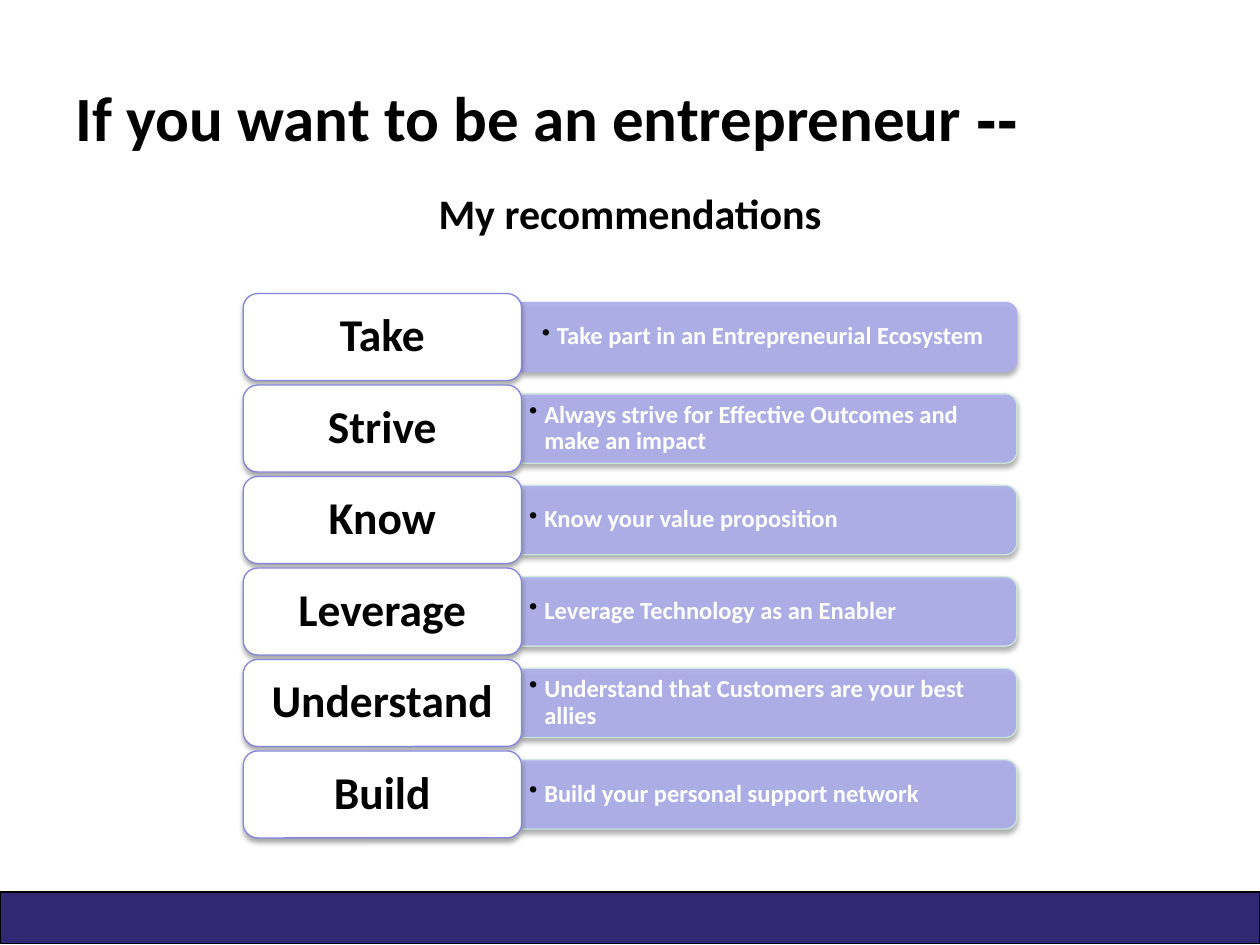
from pptx import Presentation
from pptx.dml.color import RGBColor
from pptx.enum.shapes import MSO_SHAPE
from pptx.enum.text import MSO_ANCHOR, PP_ALIGN
from pptx.oxml import parse_xml
from pptx.oxml.ns import nsdecls, qn
from pptx.util import Inches, Pt

RECT, CARD, PANEL = MSO_SHAPE.RECTANGLE, MSO_SHAPE.ROUNDED_RECTANGLE, MSO_SHAPE.ROUND_2_SAME_RECTANGLE
LEFT, CENTER = PP_ALIGN.LEFT, PP_ALIGN.CENTER
MIDDLE, BOTTOM = MSO_ANCHOR.MIDDLE, MSO_ANCHOR.BOTTOM

BLACK = RGBColor(0x00, 0x00, 0x00)
WHITE = RGBColor(0xFF, 0xFF, 0xFF)
NAVY = RGBColor(0x31, 0x28, 0x73)
LILAC = RGBColor(0xAD, 0xAD, 0xEB)
VIOLET = RGBColor(0x85, 0x85, 0xE0)
MINT = RGBColor(0xCC, 0xEC, 0xDE)

RECOMMENDATIONS = [
    ("Take", "Take part in an Entrepreneurial Ecosystem"),
    ("Strive", "Always strive for Effective Outcomes and make an impact"),
    ("Know", "Know your value proposition"),
    ("Leverage", "Leverage Technology as an Enabler"),
    ("Understand", "Understand that Customers are your best allies"),
    ("Build", "Build your personal support network"),
]
FIRST_TOP, LAST_TOP = 2.33, 5.96
CARD_LEFT, CARD_WIDTH, CARD_HEIGHT = 1.93, 2.21, 0.69
PANEL_LENGTH, PANEL_HEIGHT = 3.93, 0.55
ADVICE_WIDTH, ADVICE_HEIGHT = 3.9, 0.5


class SlideBuilder:
    """Holds the text style and the current slide, and draws each kind of element."""

    font = "Calibri"

    def __init__(self, page):
        self.page = page

    def place(self, box, left, top, width, height):
        box.left, box.top = Inches(left), Inches(top)
        box.width, box.height = Inches(width), Inches(height)

    def set_text(self, box, text, size, color, align=LEFT, anchor=MIDDLE, insets=(0.1, 0.05)):
        frame = box.text_frame
        frame.text = text
        frame.word_wrap = True
        frame.vertical_anchor = anchor
        frame.margin_left = frame.margin_right = Inches(insets[0])
        frame.margin_top = frame.margin_bottom = Inches(insets[1])
        para = frame.paragraphs[0]
        para.alignment = align
        self.style(para.runs[0], size, color)
        return para

    def style(self, span, size, color, font=None):
        span.font.name = font or self.font
        span.font.size = Pt(size)
        span.font.bold = True
        span.font.color.rgb = color

    def title(self, text, ending):
        box = self.page.shapes.title
        self.place(box, 0.5, 0.3, 9, 1.25)
        para = self.set_text(box, text, 36, BLACK)
        para.space_after = Pt(6)
        span = para.add_run()
        span.text = ending
        self.style(span, 36, BLACK, "Arial")

    def subtitle(self, text):
        box = self.page.placeholders[1]
        self.place(box, 2.79, 1.24, 4.42, 0.7)
        para = self.set_text(box, text, 24, BLACK, CENTER, BOTTOM)
        para.space_before = Pt(6)
        properties = para._p.get_or_add_pPr()
        properties.set("marL", "0")
        properties.set("indent", "0")
        properties.append(parse_xml(f"<a:buNone {nsdecls('a')}/>"))

    def shape(self, kind, left, top, width, height, fill, line):
        box = self.page.shapes.add_shape(
            kind, Inches(left), Inches(top), Inches(width), Inches(height))
        box.shadow.inherit = False
        box.fill.solid()
        box.fill.fore_color.rgb = fill
        box.line.color.rgb = line
        box.line.width = Pt(0.75)
        return box

    def shadow(self, box):
        box._element.spPr.find(qn("a:effectLst")).append(parse_xml(
            f'<a:outerShdw {nsdecls("a")} blurRad="{Pt(3.1)}" dist="{Pt(1.8)}" dir="5400000" '
            'rotWithShape="0"><a:srgbClr val="000000"><a:alpha val="35000"/></a:srgbClr></a:outerShdw>'))

    def card(self, text, top):
        box = self.shape(CARD, CARD_LEFT, top, CARD_WIDTH, CARD_HEIGHT, WHITE, VIOLET)
        self.shadow(box)
        para = self.set_text(box, text, 26, BLACK, CENTER, insets=(0.14, 0.08))
        para.line_spacing = 0.9

    def panel(self, middle, line):
        center = CARD_LEFT + CARD_WIDTH + PANEL_LENGTH / 2
        box = self.shape(PANEL, center - PANEL_HEIGHT / 2, middle - PANEL_LENGTH / 2,
                         PANEL_HEIGHT, PANEL_LENGTH, LILAC, line)
        box.rotation = 90
        for color in box._element.spPr.iter(qn("a:srgbClr")):
            color.append(parse_xml(f'<a:alpha {nsdecls("a")} val="90000"/>'))
        self.shadow(box)

    def advice(self, text, middle, insets):
        box = self.page.shapes.add_textbox(
            Inches(CARD_LEFT + CARD_WIDTH), Inches(middle - ADVICE_HEIGHT / 2),
            Inches(ADVICE_WIDTH), Inches(ADVICE_HEIGHT))
        para = self.set_text(box, text, 14, WHITE, insets=insets)
        para.line_spacing = 0.9
        properties = para._p.get_or_add_pPr()
        properties.set("marL", str(Inches(0.12)))
        properties.set("indent", str(Inches(-0.12)))
        properties.append(parse_xml(
            f'<a:buClr {nsdecls("a")}><a:srgbClr val="{BLACK}"/></a:buClr>'))
        properties.append(parse_xml(f'<a:buChar {nsdecls("a")} char="•"/>'))


def main():
    deck = Presentation()
    deck.slide_width, deck.slide_height = Inches(10), Inches(7.5)
    builder = SlideBuilder(deck.slides.add_slide(deck.slide_layouts[1]))

    builder.shape(RECT, 0, 7.08, 10, 0.41, NAVY, BLACK)
    builder.title("If you want to be an entrepreneur ", "--")
    builder.subtitle("My recommendations")

    pitch = (LAST_TOP - FIRST_TOP) / (len(RECOMMENDATIONS) - 1)
    for row, (keyword, sentence) in enumerate(RECOMMENDATIONS):
        top = FIRST_TOP + row * pitch
        middle = top + CARD_HEIGHT / 2
        builder.panel(middle, MINT if row else LILAC)
        builder.advice(sentence, middle, (0.06, 0.03) if row else (0.16, 0.08))
        builder.card(keyword, top)

    deck.save("out.pptx")


if __name__ == "__main__":
    main()
